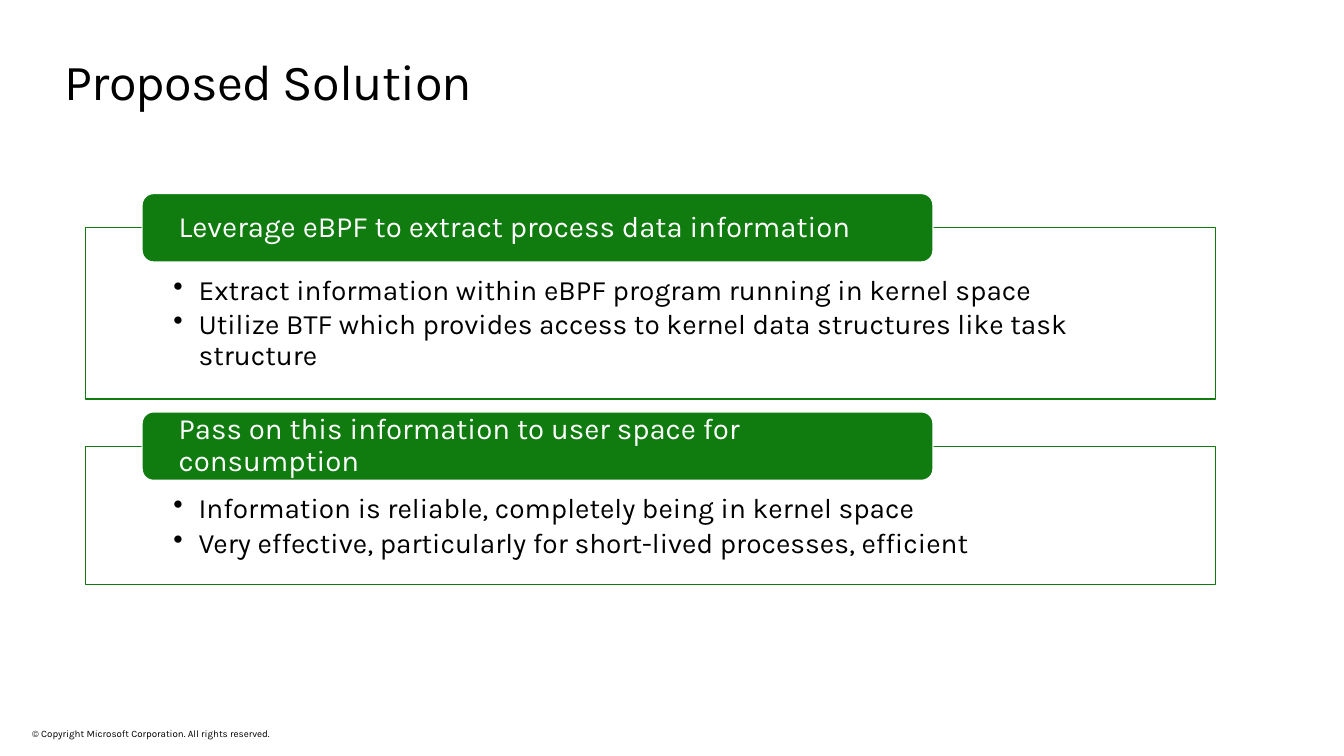
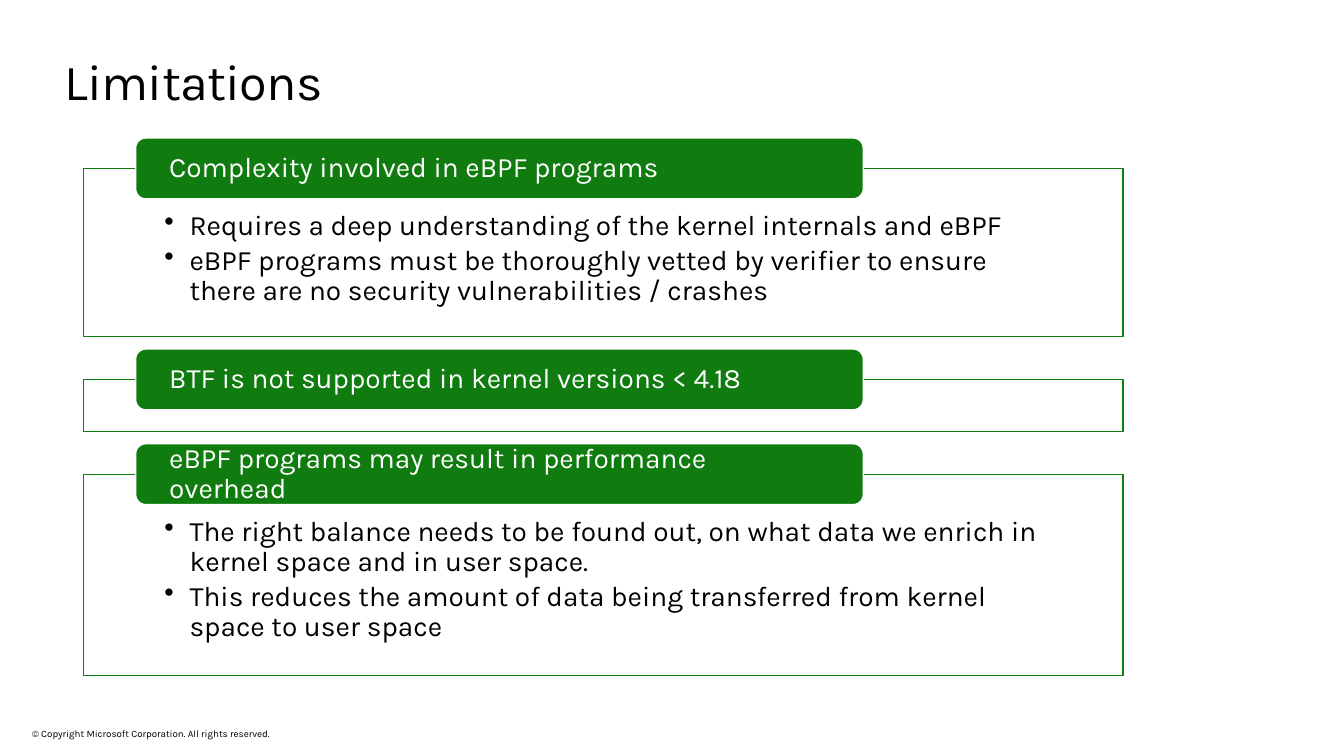
import dataclasses

import lxml.etree
import pptx
import pptx.dml.color
import pptx.enum.shapes
import pptx.enum.text
import pptx.oxml.ns
import pptx.util

Pt = pptx.util.Pt
RGBColor = pptx.dml.color.RGBColor
Anchor = pptx.enum.text.MSO_ANCHOR
Shape = pptx.enum.shapes.MSO_SHAPE
qn = pptx.oxml.ns.qn


@dataclasses.dataclass(frozen=True)
class Theme:
    font: str = "Karla"
    green: RGBColor = RGBColor(0x10, 0x7C, 0x10)
    black: RGBColor = RGBColor(0, 0, 0)
    white: RGBColor = RGBColor(255, 255, 255)
    title_size: float = 36
    body_size: float = 20
    footer_size: float = 7
    line_width: float = 0.85


@dataclasses.dataclass(frozen=True)
class Section:
    heading: str
    frame_height: float
    bullets: tuple = ()


@dataclasses.dataclass(frozen=True)
class SlideContent:
    title: str
    left: float
    top: float
    width: float
    tab_height: float
    gap: float
    heading_size: float
    sections: tuple


THEME = Theme()
FOOTER = "© Copyright Microsoft Corporation. All rights reserved."
BULLET_INDENT = 18

SLIDES = (
    SlideContent(
        "Proposed Solution", 61.2, 138.3, 807, 48.8, 9.2, 21,
        (
            Section("Leverage eBPF to extract process data information", 122.4, (
                "Extract information within eBPF program running in kernel space",
                "Utilize BTF which provides access to kernel data structures like task structure",
            )),
            Section("Pass on this information to user space for consumption", 98.6, (
                "Information is reliable, completely being in kernel space",
                "Very effective, particularly for short-lived processes, efficient",
            )),
        ),
    ),
    SlideContent(
        "Limitations", 59.8, 98.6, 742.4, 43.4, 8.8, 20,
        (
            Section("Complexity involved in eBPF programs", 120.2, (
                "Requires a deep understanding of the kernel internals and eBPF",
                "eBPF programs must be thoroughly vetted by verifier to ensure "
                "there are no security vulnerabilities / crashes",
            )),
            Section("BTF is not supported in kernel versions < 4.18", 37.2),
            Section("eBPF programs may result in performance overhead", 144, (
                "The right balance needs to be found out, on what data we enrich "
                "in kernel space and in user space.",
                "This reduces the amount of data being transferred from kernel "
                "space to user space",
            )),
        ),
    ),
)


def write_text(text_frame, text, *, size, color=THEME.black, line_spacing=1.0,
               space_after=0, bullet=False, letter_spacing=None):
    paragraph = text_frame.paragraphs[0]
    if paragraph.runs:
        paragraph = text_frame.add_paragraph()
    if bullet:
        properties = paragraph._p.get_or_add_pPr()
        properties.set("marL", str(Pt(BULLET_INDENT)))
        properties.set("indent", str(-Pt(BULLET_INDENT)))
        lxml.etree.SubElement(properties, qn("a:buChar")).set("char", "•")
    paragraph.alignment = pptx.enum.text.PP_ALIGN.LEFT
    paragraph.line_spacing = line_spacing
    paragraph.space_after = Pt(space_after)
    run = paragraph.add_run()
    run.text = text
    run.font.name = THEME.font
    run.font.size = Pt(size)
    run.font.color.rgb = color
    if letter_spacing is not None:
        run._r.get_or_add_rPr().set("spc", str(round(letter_spacing * 100)))


def prepare_text_frame(shape, anchor=Anchor.TOP, insets=(0, 0, 0, 0)):
    text_frame = shape.text_frame
    text_frame.word_wrap = True
    text_frame.vertical_anchor = anchor
    (text_frame.margin_left, text_frame.margin_top,
     text_frame.margin_right, text_frame.margin_bottom) = map(Pt, insets)
    return text_frame


def add_text_box(slide, box, text, anchor=Anchor.TOP, **text_format):
    shape = slide.shapes.add_textbox(*map(Pt, box))
    write_text(prepare_text_frame(shape, anchor), text, **text_format)


def add_filled_shape(slide, kind, box, fill, line):
    shape = slide.shapes.add_shape(kind, *map(Pt, box))
    shape.shadow.inherit = False
    shape.fill.solid()
    shape.fill.fore_color.rgb = fill
    shape.line.color.rgb = line
    shape.line.width = Pt(THEME.line_width)
    return shape


def add_section(slide, section, box, tab_height, heading_size):
    left, top, width, height = box
    frame_box = (left, top + tab_height / 2, width, height - tab_height / 2)
    frame = add_filled_shape(slide, Shape.RECTANGLE, frame_box, THEME.white, THEME.green)
    side = width * 0.0776
    text_frame = prepare_text_frame(frame, insets=(side, tab_height * 0.71, side, 11.5))
    for bullet in section.bullets:
        write_text(text_frame, bullet, size=THEME.body_size, line_spacing=0.9,
                   space_after=3, bullet=True)

    tab_box = (left + width * 0.05, top, width * 0.7, tab_height)
    tab = add_filled_shape(slide, Shape.ROUNDED_RECTANGLE, tab_box, THEME.green, THEME.white)
    side = width * 0.0294
    text_frame = prepare_text_frame(tab, Anchor.MIDDLE, (side, 0, side, 0))
    write_text(text_frame, section.heading, size=heading_size, color=THEME.white,
               line_spacing=0.9)


def add_section_slide(presentation, content):
    slide = presentation.slides.add_slide(presentation.slide_layouts[6])
    add_text_box(slide, (23, 520, 353, 8.5), FOOTER, Anchor.BOTTOM, size=THEME.footer_size)
    add_text_box(slide, (46, 36, 868, 44), content.title, size=THEME.title_size,
                 letter_spacing=-0.5)
    top = content.top
    for section in content.sections:
        height = content.tab_height / 2 + section.frame_height
        add_section(slide, section, (content.left, top, content.width, height),
                    content.tab_height, content.heading_size)
        top += height + content.gap


def main():
    presentation = pptx.Presentation()
    presentation.slide_width = Pt(960)
    presentation.slide_height = Pt(540)
    for content in SLIDES:
        add_section_slide(presentation, content)
    presentation.save("out.pptx")


if __name__ == "__main__":
    main()
